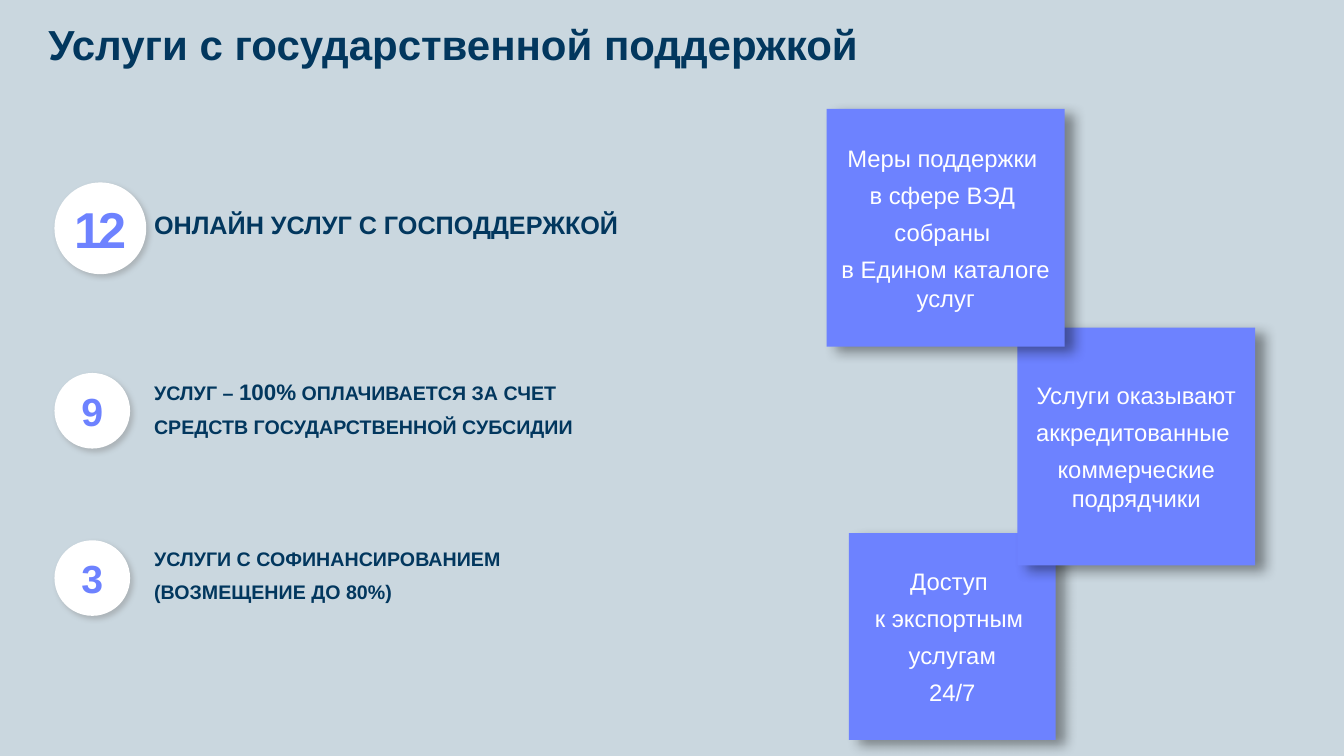
from lxml import etree
from pptx import Presentation
from pptx.dml.color import RGBColor
from pptx.enum.shapes import MSO_SHAPE
from pptx.enum.text import MSO_ANCHOR, MSO_AUTO_SIZE, PP_ALIGN
from pptx.oxml.ns import qn
from pptx.util import Inches, Pt

OVAL, RECTANGLE = MSO_SHAPE.OVAL, MSO_SHAPE.RECTANGLE
TOP, MIDDLE = MSO_ANCHOR.TOP, MSO_ANCHOR.MIDDLE
LEFT, CENTER = PP_ALIGN.LEFT, PP_ALIGN.CENTER
NO_AUTOFIT = MSO_AUTO_SIZE.NONE

BACKGROUND = RGBColor(0xCA, 0xD7, 0xDF)
NAVY = RGBColor(0x02, 0x37, 0x5E)
VIOLET = RGBColor(0x6D, 0x82, 0xFF)
WHITE = RGBColor(0xFF, 0xFF, 0xFF)
GRAY = RGBColor(0x80, 0x80, 0x80)
BLACK = RGBColor(0x00, 0x00, 0x00)

TITLE = "Услуги с государственной поддержкой"
SERVICES = [
    ("12", (0.54, 1.81, 0.91), 36, (1.43, 2.07, 5.1, 0.38), 18, 0,
     [[("ОНЛАЙН УСЛУГ С ГОСПОДДЕРЖКОЙ", 0)]]),
    ("9", (0.54, 3.7, 0.75), 28, (1.43, 3.72, 4.6, 0.72), 14, 6,
     [[("УСЛУГ – ", 0), ("100%", 2), (" ОПЛАЧИВАЕТСЯ ЗА СЧЕТ", 0)],
      [("СРЕДСТВ ГОСУДАРСТВЕННОЙ СУБСИДИИ", 0)]]),
    ("3", (0.54, 5.36, 0.75), 28, (1.43, 5.46, 3.71, 0.55), 14, 6,
     [[("УСЛУГИ С СОФИНАНСИРОВАНИЕМ", 0)], [("(ВОЗМЕЩЕНИЕ ДО 80%)", 0)]]),
]
BENEFITS = [
    ((8.42, 5.29, 2.05), "Доступ \nк экспортным \nуслугам\n24/7"),
    ((10.09, 3.25, 2.36),
     "Услуги оказывают\nаккредитованные \nкоммерческие подрядчики"),
    ((8.2, 1.08, 2.36),
     "Меры поддержки \nв сфере ВЭД \nсобраны \nв Едином каталоге услуг"),
]


def style_run(run, size, color, bold=False):
    """Apply the slide's font to a run."""
    run.font.name = "Arial"
    run.font.size = Pt(size)
    run.font.bold = bold
    run.font.color.rgb = color


def add_shadow(shape, color, blur, distance, angle):
    """Give a shape an outer shadow of 40% opacity."""
    shape.shadow.inherit = False
    effects = shape._element.spPr.find(qn("a:effectLst"))
    shadow = etree.SubElement(
        effects, qn("a:outerShdw"), blurRad=str(Pt(blur)), dist=str(Pt(distance)),
        dir=str(angle * 60000), algn="tl", rotWithShape="0")
    shade = etree.SubElement(shadow, qn("a:srgbClr"), val=str(color))
    etree.SubElement(shade, qn("a:alpha"), val="40000")


def add_plate(slide, kind, box, fill):
    """Add a borderless shape as wide as it is high."""
    left, top, side = box
    plate = slide.shapes.add_shape(
        kind, Inches(left), Inches(top), Inches(side), Inches(side))
    plate.fill.solid()
    plate.fill.fore_color.rgb = fill
    plate.line.fill.background()
    plate.text_frame.vertical_anchor = MIDDLE
    return plate


def add_title(slide, box):
    """Place and format the slide title."""
    title = slide.shapes.title
    title.left, title.top, title.width, title.height = map(Inches, box)
    frame = title.text_frame
    frame.text = TITLE
    frame.word_wrap = True
    frame.auto_size = NO_AUTOFIT
    frame.vertical_anchor = TOP
    heading = frame.paragraphs[0]
    heading.alignment = LEFT
    heading.line_spacing = Pt(34)
    heading.space_before = Pt(0)
    style_run(heading.runs[0], 30, NAVY, True)


def add_count(slide, box, count, size):
    """Add a white circle with the number of services."""
    circle = add_plate(slide, OVAL, box, WHITE)
    add_shadow(circle, GRAY, 4, 3, 45)
    frame = circle.text_frame
    frame.word_wrap = False
    frame.margin_left = frame.margin_right = Inches(0.04)
    frame.margin_top = frame.margin_bottom = Inches(0.04)
    frame.text = count
    number = frame.paragraphs[0]
    number.alignment = CENTER
    style_run(number.runs[0], size, VIOLET, True)
    number.runs[0].font._element.set("spc", "-300")


def add_label(slide, box, lines, size, space_before):
    """Add the description that stands beside a circle."""
    frame = slide.shapes.add_textbox(*map(Inches, box)).text_frame
    frame.word_wrap = True
    frame.vertical_anchor = MIDDLE
    for index, parts in enumerate(lines):
        line = frame.add_paragraph() if index else frame.paragraphs[0]
        line.line_spacing = 0.7
        line.space_before = Pt(space_before)
        line.space_after = Pt(6)
        for wording, extra_size in parts:
            run = line.add_run()
            run.text = wording
            style_run(run, size + extra_size, NAVY, True)


def add_benefit(slide, box, wording):
    """Add a violet square with centred text."""
    square = add_plate(slide, RECTANGLE, box, VIOLET)
    add_shadow(square, BLACK, 9, 8, 30)
    square.text_frame.text = wording
    square.text_frame.word_wrap = True
    for line in square.text_frame.paragraphs:
        line.alignment = CENTER
        line.space_before = line.space_after = Pt(3)
        style_run(line.runs[0], 17, WHITE)


def main():
    """Build the slide and save it."""
    deck = Presentation()
    deck.slide_width, deck.slide_height = Inches(13.33), Inches(7.5)
    slide = deck.slides.add_slide(deck.slide_layouts[5])
    slide.background.fill.solid()
    slide.background.fill.fore_color.rgb = BACKGROUND
    add_title(slide, (0.38, 0.16, 10.2, 0.58))
    for count, circle, count_size, label, size, space_before, lines in SERVICES:
        add_label(slide, label, lines, size, space_before)
        add_count(slide, circle, count, count_size)
    for box, wording in BENEFITS:
        add_benefit(slide, box, wording)
    deck.save("out.pptx")


if __name__ == "__main__":
    main()
